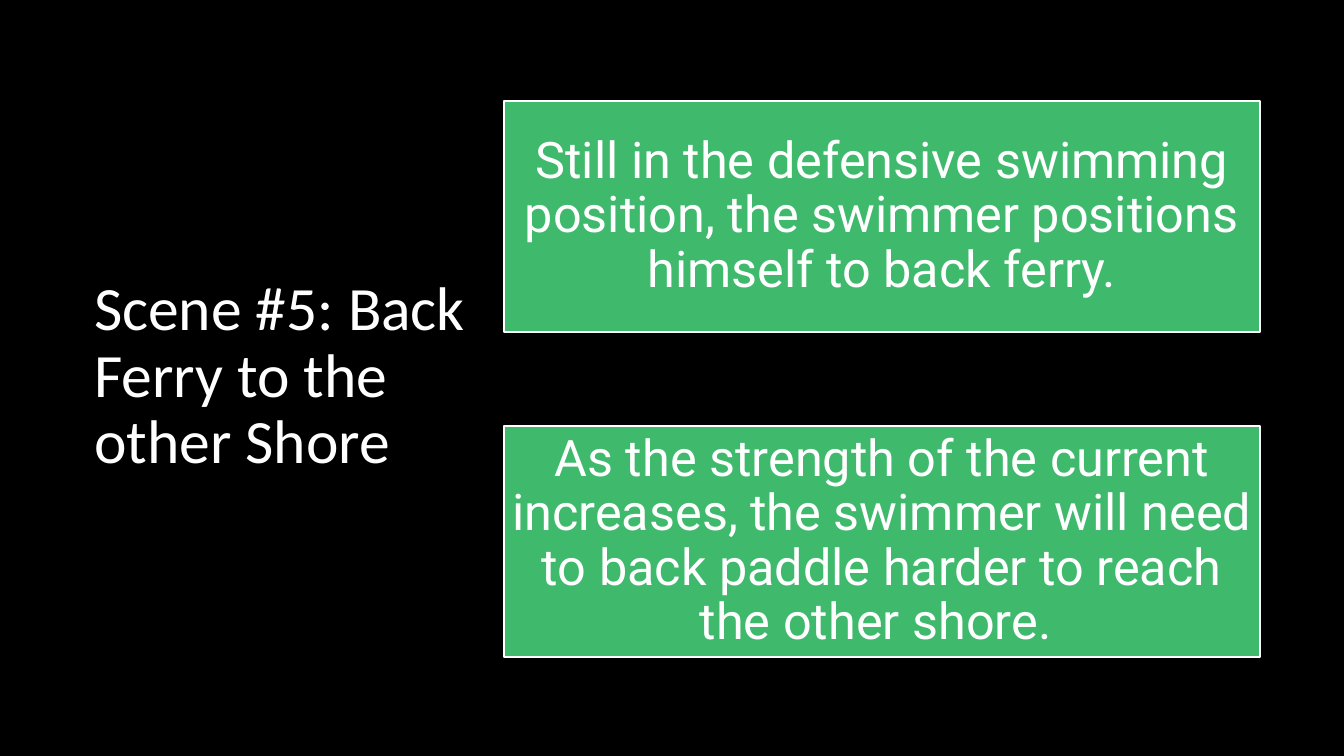
import pptx
import pptx.util
import pptx.dml.color
import pptx.enum.shapes
import pptx.enum.text

PX = 914400 / 100.8
SLIDE = (1344, 756)
BLACK, WHITE, GREEN = "000000", "FFFFFF", "3FB96C"

HEADING = "Scene #5: Back Ferry to the other Shore"
HEADING_AREA = (84, 168, 420, 419)
STEPS = [
    "Still in the defensive swimming position, the swimmer positions himself to back ferry.",
    "As the strength of the current increases, the swimmer will need to back paddle harder to reach the other shore. ",
]
STEP_LEFT, STEP_TOP, STEP_WIDTH, STEP_HEIGHT, STEP_GAP = 504, 101, 756, 231, 94
STEP_INSET = 3


def px(length):
    return pptx.util.Emu(round(length * PX))


def color(value):
    return pptx.dml.color.RGBColor.from_string(value)


def write(frame, text, *, font, size, align, inset=None):
    frame.word_wrap = True
    frame.auto_size = pptx.enum.text.MSO_AUTO_SIZE.NONE
    frame.vertical_anchor = pptx.enum.text.MSO_ANCHOR.MIDDLE
    if inset is not None:
        frame.margin_left = frame.margin_right = px(inset)
        frame.margin_top = frame.margin_bottom = px(inset)
    paragraph = frame.paragraphs[0]
    paragraph.alignment = align
    paragraph.line_spacing = 0.9
    run = paragraph.add_run()
    run.text = text
    run.font.name = font
    run.font.size = pptx.util.Pt(size)
    run.font.color.rgb = color(WHITE)


def main():
    deck = pptx.Presentation()
    deck.slide_width, deck.slide_height = map(px, SLIDE)
    slide = deck.slides.add_slide(deck.slide_layouts[5])
    slide.background.fill.solid()
    slide.background.fill.fore_color.rgb = color(BLACK)

    heading = slide.shapes.title
    heading.left, heading.top, heading.width, heading.height = map(px, HEADING_AREA)
    write(heading.text_frame, HEADING, font="Calibri", size=44,
          align=pptx.enum.text.PP_ALIGN.LEFT)

    for index, sentence in enumerate(STEPS):
        top = STEP_TOP + index * (STEP_HEIGHT + STEP_GAP)
        step = slide.shapes.add_shape(
            pptx.enum.shapes.MSO_SHAPE.RECTANGLE,
            px(STEP_LEFT), px(top), px(STEP_WIDTH), px(STEP_HEIGHT))
        step.shadow.inherit = False
        step.fill.solid()
        step.fill.fore_color.rgb = color(GREEN)
        step.line.color.rgb = color(WHITE)
        step.line.width = pptx.util.Pt(1)
        write(step.text_frame, sentence, font="Roboto", size=36,
              align=pptx.enum.text.PP_ALIGN.CENTER, inset=STEP_INSET)

    deck.save("out.pptx")


if __name__ == "__main__":
    main()
